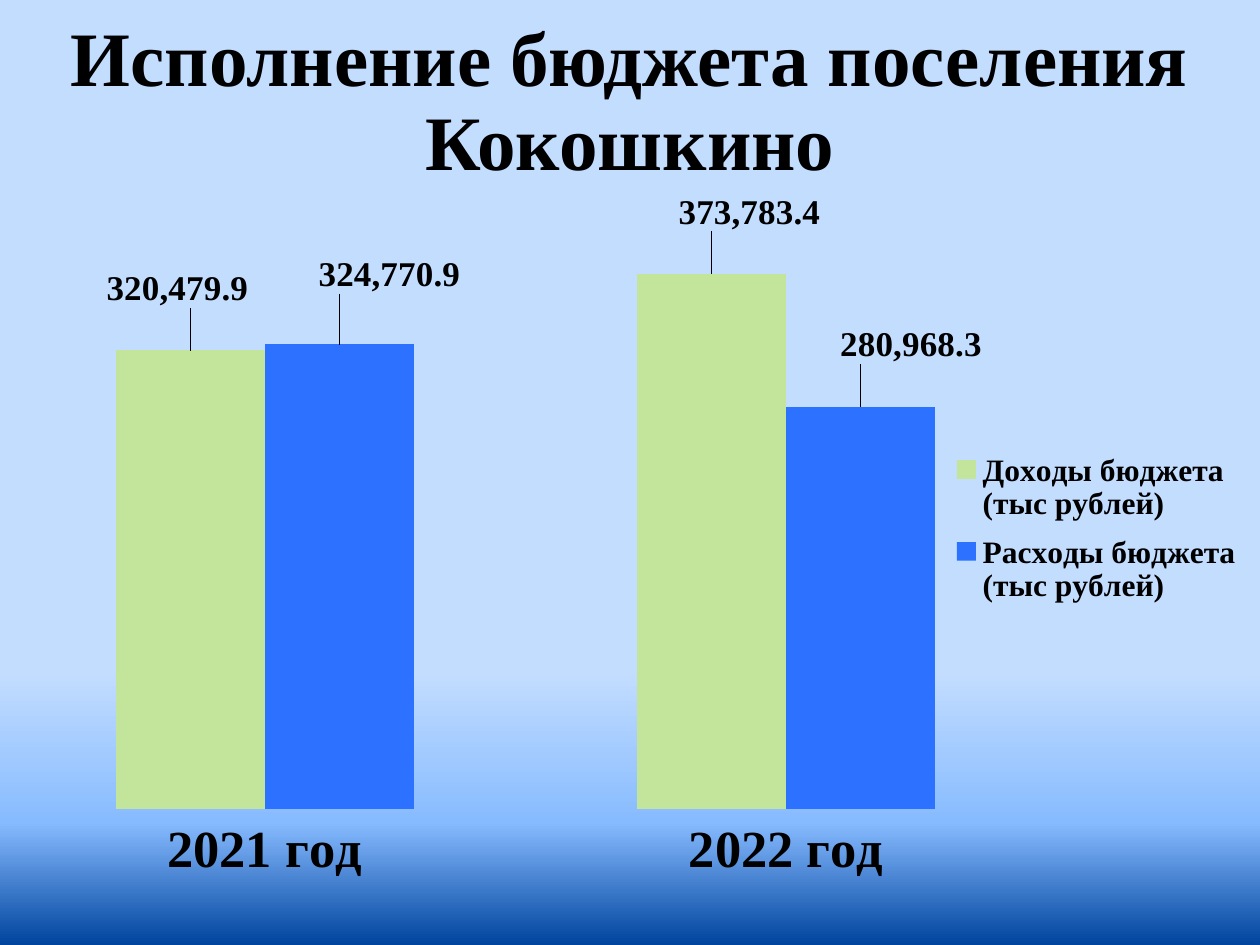
from copy import deepcopy

from lxml import etree
from pptx import Presentation
from pptx.chart.data import CategoryChartData
from pptx.dml.color import RGBColor
from pptx.enum.chart import (XL_CHART_TYPE, XL_LABEL_POSITION,
                             XL_LEGEND_POSITION, XL_TICK_LABEL_POSITION,
                             XL_TICK_MARK)
from pptx.enum.text import MSO_ANCHOR, PP_ALIGN
from pptx.oxml.ns import qn
from pptx.util import Cm, Pt

COLUMNS = XL_CHART_TYPE.COLUMN_CLUSTERED
OUTSIDE = XL_LABEL_POSITION.OUTSIDE_END
RIGHT = XL_LEGEND_POSITION.RIGHT
LOW = XL_TICK_LABEL_POSITION.LOW
NO_TICK = XL_TICK_MARK.NONE
BOTTOM = MSO_ANCHOR.BOTTOM
CENTER = PP_ALIGN.CENTER

FACE = "Times New Roman"
NUMBER = "#,##0.0"
STOPS = [(0.71, "C3DDFF"), (0.87, "87BBFF"), (1, "00449E")]
YEARS = ["2021 год", "2022 год"]
# Name, colour, values, label shifts as shares of the chart size
SERIES = [
    ("Доходы бюджета (тыс рублей)", "C2E59B", (320479.9, 373783.4),
     ((-0.01, -0.05), (0.03, -0.05))),
    ("Расходы бюджета (тыс рублей)", "2C71FF", (324770.9, 280968.3),
     ((0.04, -0.06), (0.04, -0.05))),
]


def color(value):
    return RGBColor.from_string(value)


def style(font, size):
    font.name = FACE
    font.size = Pt(size)
    font.bold = True
    font.color.rgb = color("000000")


def layout(**parts):
    """Return a manual chart layout holding the given values in order."""
    node = etree.Element(qn("c:layout"))
    manual = etree.SubElement(node, qn("c:manualLayout"))
    for tag, value in parts.items():
        etree.SubElement(manual, qn("c:" + tag)).set("val", str(value))
    return node


def frame(x, y, w, h, **extra):
    return layout(**extra, xMode="edge", yMode="edge", x=x, y=y, w=w, h=h)


def backdrop(slide):
    fill = slide.background.fill
    fill.gradient()
    fill.gradient_angle = 270
    first = next(slide.element.iter(qn("a:gs")))
    first.addnext(deepcopy(first))
    for stop, (place, value) in zip(fill.gradient_stops, STOPS):
        stop.position = place
        stop.color.rgb = color(value)


def title(slide, left, top, width, height):
    box = slide.shapes.add_textbox(left, top, width, height)
    text = box.text_frame
    text.word_wrap = True
    text.vertical_anchor = BOTTOM
    para = text.paragraphs[0]
    para.text = "Исполнение бюджета поселения Кокошкино"
    para.alignment = CENTER
    para.line_spacing = 0.9
    style(para.font, 44)


def budget(slide, left, top, width, height):
    data = CategoryChartData(number_format=NUMBER)
    data.categories = YEARS
    for name, _, values, _ in SERIES:
        data.add_series(name, values)
    chart = slide.shapes.add_chart(COLUMNS, left, top, width, height,
                                   data).chart
    style(chart.font, 18)
    chart.has_title = False

    # Plot area and axes
    plot = chart.plots[0]
    plot.gap_width = 150
    plot.overlap = 0
    plot.vary_by_categories = False
    area = chart.element.find(".//" + qn("c:plotArea"))
    for old in area.findall(qn("c:layout")):
        area.remove(old)
    area.insert(0, frame(0.003, 0.028, 0.828, 0.789, layoutTarget="inner"))
    years = chart.category_axis
    years.major_tick_mark = NO_TICK
    years.tick_label_position = LOW
    years.format.line.fill.background()
    style(years.tick_labels.font, 30)
    scale = chart.value_axis
    scale.visible = False
    scale.has_major_gridlines = False
    scale.minimum_scale = 0
    scale.maximum_scale = 410000

    # Bars and their labels
    for bars, (_, value, _, shifts) in zip(plot.series, SERIES):
        bars.format.fill.solid()
        bars.format.fill.fore_color.rgb = color(value)
        labels = bars.data_labels
        labels.show_value = True
        labels.number_format = NUMBER
        labels.number_format_is_linked = False
        labels.position = OUTSIDE
        style(labels.font, 20)
        for i, (x, y) in enumerate(shifts):
            label = bars.points[i].data_label
            label.position = OUTSIDE
            style(label.font, 20)
            label._get_or_add_dLbl().insert(1, layout(x=x, y=y))

    # Legend
    chart.has_legend = True
    legend = chart.legend
    legend.position = RIGHT
    legend.include_in_layout = False
    style(legend.font, 18)
    node = chart.element.find(".//" + qn("c:legend"))
    for old in node.findall(qn("c:layout")):
        node.remove(old)
    node.find(qn("c:legendPos")).addnext(frame(0.75, 0.32, 0.24, 0.24))


def main():
    deck = Presentation()
    deck.slide_width = Cm(25.4)
    deck.slide_height = Cm(19.05)
    slide = deck.slides.add_slide(deck.slide_layouts[6])
    backdrop(slide)
    title(slide, 0, Cm(0.69), Cm(25.4), Cm(3.2))
    budget(slide, 0, Cm(3.89), Cm(25.4), Cm(15.16))
    deck.save("out.pptx")


if __name__ == "__main__":
    main()
